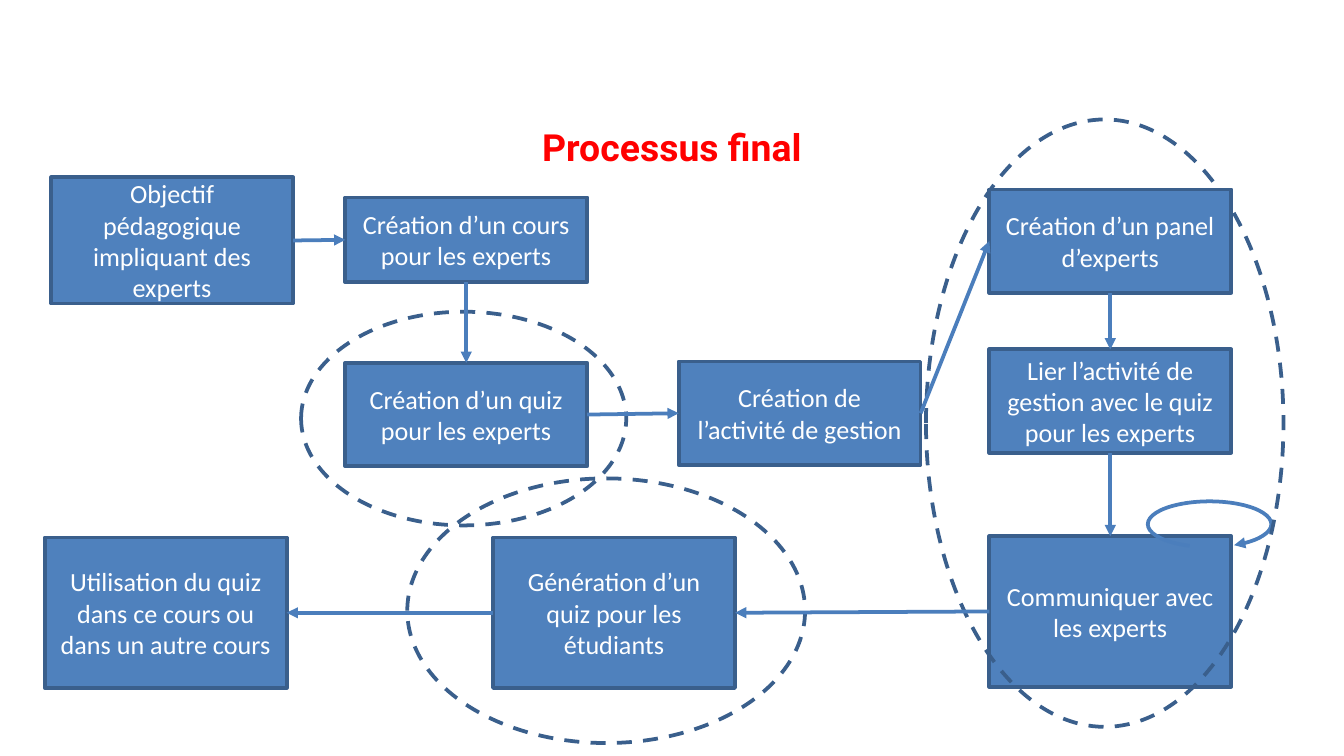
import dataclasses

import pptx
import pptx.dml.color
import pptx.enum.dml
import pptx.enum.shapes
import pptx.enum.text
import pptx.oxml
import pptx.oxml.ns
import pptx.util

Pt = pptx.util.Pt
RGB = pptx.dml.color.RGBColor.from_string
SHAPE = pptx.enum.shapes.MSO_SHAPE
ANCHOR = pptx.enum.text.MSO_ANCHOR
CENTER = pptx.enum.text.PP_ALIGN.CENTER
TOP, LEFT, BOTTOM, RIGHT = range(4)


@dataclasses.dataclass(frozen=True)
class Theme:
    stage_fill: str = "4F81BD"
    outline: str = "3A5F8C"
    arrow: str = "4B7EBC"
    title: str = "FF0000"
    stage_text: str = "FFFFFF"
    title_font: str = "Roboto"
    stage_font: str = "Calibri"
    title_size: float = 20
    stage_size: float = 14
    line_width: float = 2


THEME = Theme()
STAGE_WIDTH = 129.6

EARLY_STAGES = {
    "objective": (3.4, 31, 67.7, "Objectif pédagogique impliquant des experts"),
    "quiz": (161, 130.4, 55.4, "Création d’un quiz pour les experts"),
    "course": (161, 41.8, 45.4, "Création d’un cours pour les experts"),
    "contact": (506, 223.3, 80.6, "Communiquer avec les experts"),
    "generation": (240.2, 224, 80.6, "Génération d’un quiz pour les étudiants"),
    "reuse": (0, 224, 80.6, "Utilisation du quiz dans ce cours ou dans un autre cours"),
}
GROUPS = [
    (472.1, 0, 191.5, 325.4),
    (194.2, 192.3, 213.1, 141.8),
    (137.3, 103, 174.2, 114.5),
]
LATE_STAGES = {
    "management": (339.6, 129.7, 55.4, "Création de l’activité de gestion"),
    "binding": (506, 123.2, 55.4, "Lier l’activité de gestion avec le quiz pour les experts"),
    "panel": (506, 37.5, 55.4, "Création d’un panel d’experts"),
}
ARROWS = [
    ("objective", RIGHT, "course", LEFT),
    ("course", BOTTOM, "quiz", TOP),
    ("quiz", RIGHT, "management", LEFT),
    ("management", RIGHT, "panel", LEFT),
    ("panel", BOTTOM, "binding", TOP),
    ("binding", BOTTOM, "contact", TOP),
    ("contact", LEFT, "generation", RIGHT),
    ("generation", LEFT, "reuse", RIGHT),
]
LOOP = (590.9, 204.6, 66.2, 24.5)


def apply_format(target, values):
    for name, value in values.items():
        setattr(target, name, value)


def write_text(frame, text, anchor, font, size, color, bold):
    apply_format(frame, {"word_wrap": True, "vertical_anchor": anchor,
                         "auto_size": pptx.enum.text.MSO_AUTO_SIZE.NONE})
    para = frame.paragraphs[0]
    para.alignment = CENTER
    span = para.add_run()
    span.text = text
    apply_format(span.font, {"name": font, "size": Pt(size), "bold": bold})
    span.font.color.rgb = RGB(color)


def style_line(line, color):
    line.color.rgb = RGB(color)
    line.width = Pt(THEME.line_width)


def add_arrowhead(shape):
    head = pptx.oxml.parse_xml(
        f'<a:tailEnd {pptx.oxml.ns.nsdecls("a")} type="triangle"/>')
    shape.line._get_or_add_ln().append(head)


def add_outline(page, kind, box, color):
    shape = page.shapes.add_shape(kind, *map(Pt, box))
    shape.shadow.inherit = False
    shape.fill.background()
    style_line(shape.line, color)
    return shape


def add_stage(page, box, text):
    shape = add_outline(page, SHAPE.RECTANGLE, box, THEME.outline)
    shape.fill.solid()
    shape.fill.fore_color.rgb = RGB(THEME.stage_fill)
    write_text(shape.text_frame, text, ANCHOR.MIDDLE, THEME.stage_font,
               THEME.stage_size, THEME.stage_text, False)
    return shape


def add_arrow(page, source, source_side, target, target_side):
    arrow = page.shapes.add_connector(
        pptx.enum.shapes.MSO_CONNECTOR.STRAIGHT, 0, 0, 0, 0)
    arrow.begin_connect(source, source_side)
    arrow.end_connect(target, target_side)
    style_line(arrow.line, THEME.arrow)
    add_arrowhead(arrow)
    arrow._element.spPr.append(pptx.oxml.parse_xml(
        f'<a:effectLst {pptx.oxml.ns.nsdecls("a")}/>'))


def draw_title(page, box):
    title = page.shapes.title
    apply_format(title, dict(zip(("left", "top", "width", "height"), map(Pt, box))))
    write_text(title.text_frame, "Processus final", ANCHOR.BOTTOM,
               THEME.title_font, THEME.title_size, THEME.title, True)


def draw_process(page, box):
    left, top = box[:2]

    def place(x, y, width, height):
        return left + x, top + y, width, height

    def add_stages(stages):
        return {name: add_stage(page, place(x, y, STAGE_WIDTH, height), text)
                for name, (x, y, height, text) in stages.items()}

    stages = add_stages(EARLY_STAGES)
    loop = add_outline(page, SHAPE.ARC, place(*LOOP), THEME.arrow)
    loop.adjustments[0] = 79.52
    loop.adjustments[1] = 24.329
    add_arrowhead(loop)
    for group in GROUPS:
        ellipse = add_outline(page, SHAPE.OVAL, place(*group), THEME.outline)
        ellipse.line.dash_style = pptx.enum.dml.MSO_LINE.DASH
    stages.update(add_stages(LATE_STAGES))
    for source, source_side, target, target_side in ARROWS:
        add_arrow(page, stages[source], source_side, stages[target], target_side)


def main():
    deck = pptx.Presentation()
    apply_format(deck, {"slide_width": Pt(720), "slide_height": Pt(405)})
    page = deck.slides.add_slide(deck.slide_layouts[5])
    draw_title(page, (144, 61.2, 432, 33.1))
    draw_process(page, (24, 64, 664, 335))
    deck.save("out.pptx")


if __name__ == "__main__":
    main()
